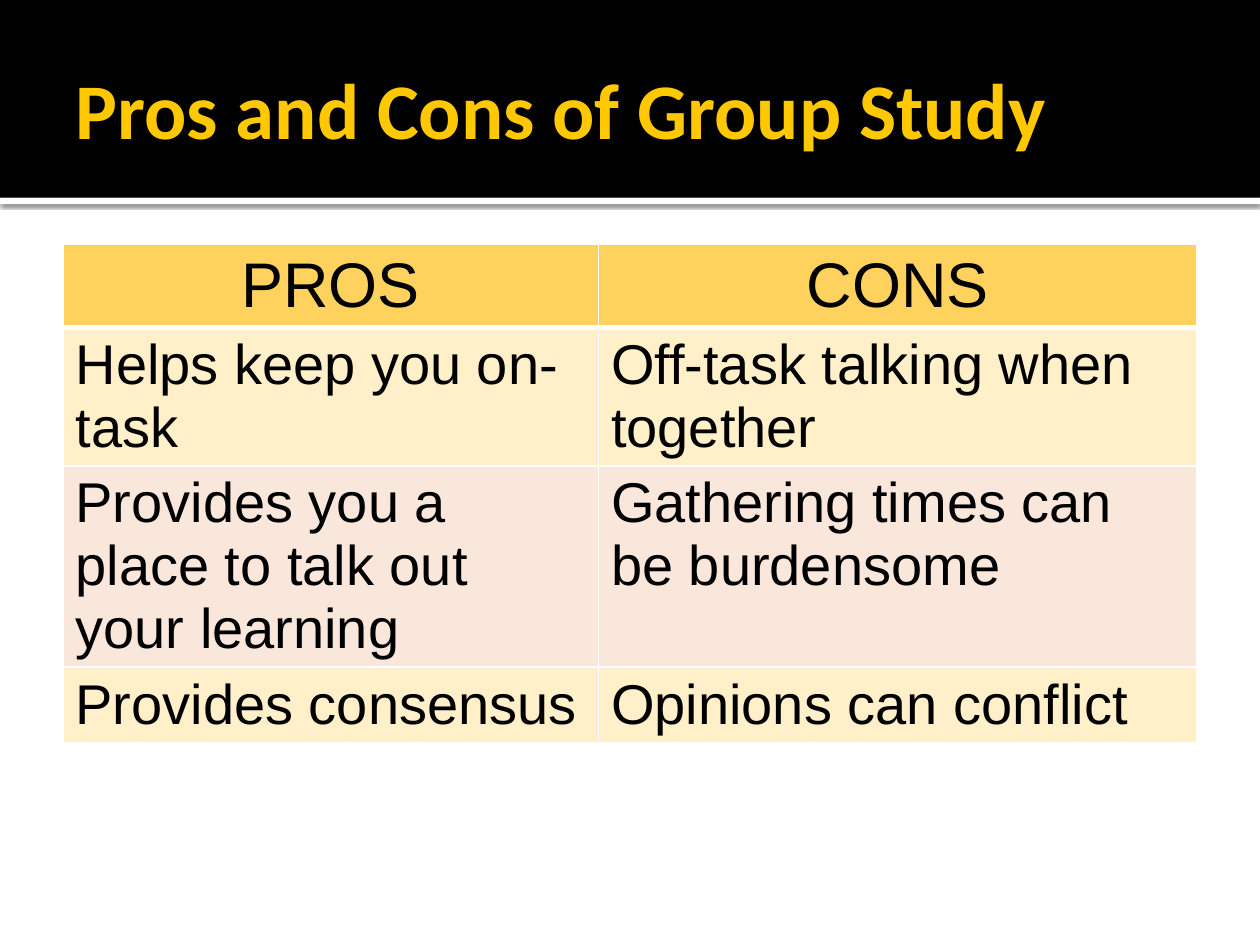
import pptx
import pptx.util
import pptx.dml.color
import pptx.enum.shapes
import pptx.enum.text
import pptx.oxml
import pptx.oxml.ns

Inches = pptx.util.Inches
Pt = pptx.util.Pt
RGBColor = pptx.dml.color.RGBColor

WHITE = RGBColor(0xFF, 0xFF, 0xFF)
BLACK = RGBColor(0x00, 0x00, 0x00)
TITLE_GOLD = RGBColor(0xFF, 0xC8, 0x00)
HEADER_GOLD = RGBColor(0xFF, 0xD2, 0x5D)
ROW_CREAM = RGBColor(0xFF, 0xF0, 0xC9)
ROW_PINK = RGBColor(0xFA, 0xE7, 0xDC)

ROWS = [
    ("PROS", "CONS"),
    ("Helps keep you on-task", "Off-task talking when together"),
    ("Provides you a place to talk out your learning",
     "Gathering times can be burdensome"),
    ("Provides consensus", "Opinions can conflict"),
]
ROW_FILLS = [HEADER_GOLD, ROW_CREAM, ROW_PINK, ROW_CREAM]


def add_run(paragraph, text, font_name, size, color, bold=False):
    run = paragraph.add_run()
    run.text = text
    run.font.name = font_name
    run.font.size = Pt(size)
    run.font.bold = bold
    run.font.color.rgb = color


def set_borders(cell, bottom_width):
    """Draw white borders, 1 pt wide except for the bottom one."""
    properties = cell._tc.get_or_add_tcPr()
    widths = {"lnL": 1, "lnR": 1, "lnT": 1, "lnB": bottom_width}
    for position, (side, width) in enumerate(widths.items()):
        properties.insert(position, pptx.oxml.parse_xml(
            f'<a:{side} {pptx.oxml.ns.nsdecls("a")} w="{Pt(width)}">'
            f'<a:solidFill><a:srgbClr val="{WHITE}"/></a:solidFill></a:{side}>'))


presentation = pptx.Presentation()
presentation.slide_width = Inches(10)
presentation.slide_height = Inches(7.5)
slide = presentation.slides.add_slide(presentation.slide_layouts[5])

# Header band and the white strip below it, both behind the title
bands = []
for top, height, color in [(1.57, 0.05, WHITE), (0, 1.57, BLACK)]:
    band = slide.shapes.add_shape(
        pptx.enum.shapes.MSO_SHAPE.RECTANGLE,
        Inches(0), Inches(top), Inches(10), Inches(height))
    band.shadow.inherit = False
    band.fill.solid()
    band.fill.fore_color.rgb = color
    band.line.fill.background()
    bands.append(band)

title = slide.shapes.title
for band in bands:
    title._element.addprevious(band._element)

strip_effects = bands[0]._element.spPr.find(pptx.oxml.ns.qn("a:effectLst"))
strip_effects.append(pptx.oxml.parse_xml(
    f'<a:outerShdw {pptx.oxml.ns.nsdecls("a")} blurRad="{Pt(2.5)}" '
    f'dist="{Pt(0.8)}" dir="5400000" algn="tl" rotWithShape="0">'
    f'<a:srgbClr val="{BLACK}"><a:alpha val="60000"/></a:srgbClr></a:outerShdw>'))

# Title
title.left, title.top = Inches(0.5), Inches(0.17)
title.width, title.height = Inches(9), Inches(1.37)
frame = title.text_frame
frame.word_wrap = True
frame.vertical_anchor = pptx.enum.text.MSO_ANCHOR.MIDDLE
frame.margin_left = Inches(0.1)
frame.margin_right = frame.margin_top = frame.margin_bottom = Inches(0.05)
paragraph = frame.paragraphs[0]
paragraph.alignment = pptx.enum.text.PP_ALIGN.LEFT
add_run(paragraph, "Pros and Cons of Group Study", "Calibri", 45, TITLE_GOLD, True)

# Pros and cons table; rows grow to fit their text
table_frame = slide.shapes.add_table(
    len(ROWS), 2, Inches(0.5), Inches(1.94), Inches(9), Inches(4.2))
table = table_frame.table
for column, width in zip(table.columns, [4.25, 4.75]):
    column.width = Inches(width)

for row_index, (texts, fill) in enumerate(zip(ROWS, ROW_FILLS)):
    is_header = row_index == 0
    table.rows[row_index].height = Inches(0.41)
    for column_index, text in enumerate(texts):
        cell = table.cell(row_index, column_index)
        cell.fill.solid()
        cell.fill.fore_color.rgb = fill
        set_borders(cell, 3 if is_header else 1)
        paragraph = cell.text_frame.paragraphs[0]
        if is_header:
            paragraph.alignment = pptx.enum.text.PP_ALIGN.CENTER
        add_run(paragraph, text, "Arial", 36 if is_header else 32, BLACK)
table_frame.height = Inches(4.2)

presentation.save("out.pptx")
